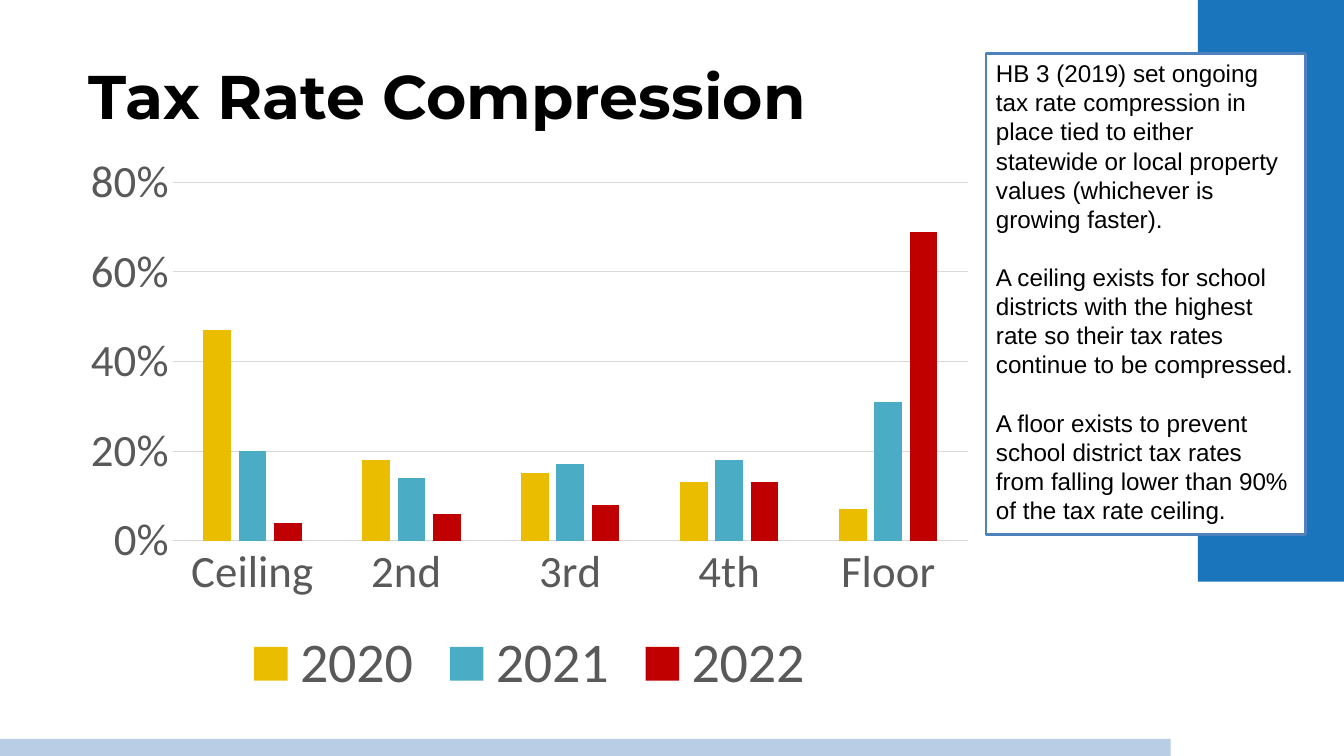
import pptx
import pptx.chart.data
import pptx.dml.color
import pptx.enum.chart
import pptx.enum.shapes
import pptx.enum.text
import pptx.util

Inches = pptx.util.Inches
Pt = pptx.util.Pt

COLORS = {
    "white": "FFFFFF", "black": "000000", "blue": "1B75BC", "pale": "B9CDE5",
    "outline": "4F81BD", "gray": "595959", "rule": "D9D9D9",
    "gold": "EABD00", "teal": "4BACC6", "red": "C00000",
}


def color(name):
    return pptx.dml.color.RGBColor.from_string(COLORS[name])


class SlideBuilder:
    def __init__(self, deck):
        self.page = deck.slides.add_slide(deck.slide_layouts[5])

    def style_font(self, font, face, size, shade, bold=False):
        font.name = face
        font.size = Pt(size)
        font.bold = bold
        font.color.rgb = color(shade)

    def title(self, text, left, top, width, height):
        box = self.page.shapes.title
        box.left, box.top = Inches(left), Inches(top)
        box.width, box.height = Inches(width), Inches(height)
        frame = box.text_frame
        frame.text = text
        frame.vertical_anchor = pptx.enum.text.MSO_ANCHOR.MIDDLE
        para = frame.paragraphs[0]
        para.alignment = pptx.enum.text.PP_ALIGN.LEFT
        self.style_font(para.runs[0].font, "Montserrat", 44, "black", True)

    def rectangle(self, left, top, width, height, fill, line=None):
        box = self.page.shapes.add_shape(
            pptx.enum.shapes.MSO_SHAPE.RECTANGLE,
            Inches(left), Inches(top), Inches(width), Inches(height))
        box.shadow.inherit = False
        box.fill.solid()
        box.fill.fore_color.rgb = color(fill)
        if line:
            box.line.color.rgb = color(line)
            box.line.width = Pt(2)
        else:
            box.line.fill.background()
        return box

    def note(self, texts, left, top, width, height):
        box = self.rectangle(left, top, width, height, "white", "outline")
        frame = box.text_frame
        frame.word_wrap = True
        frame.vertical_anchor = pptx.enum.text.MSO_ANCHOR.TOP
        frame.text = "\n".join(texts)
        for index, para in enumerate(frame.paragraphs):
            para.alignment = pptx.enum.text.PP_ALIGN.LEFT
            para.line_spacing = Pt(20.8)
            para.space_before = Pt(20.8 if index else 0)
            self.style_font(para.runs[0].font, "Arial", 17.3, "black")

    def column_chart(self, categories, series, left, top, width, height):
        data = pptx.chart.data.CategoryChartData(number_format="0%")
        data.categories = categories
        for name, shade, values in series:
            data.add_series(name, values)
        chart = self.page.shapes.add_chart(
            pptx.enum.chart.XL_CHART_TYPE.COLUMN_CLUSTERED,
            Inches(left), Inches(top), Inches(width), Inches(height), data).chart
        chart.has_title = False
        self.style_font(chart.font, "Calibri", 10, "black")

        plot = chart.plots[0]
        plot.gap_width = 219
        plot.overlap = -27
        plot.vary_by_categories = False
        for columns, (name, shade, values) in zip(plot.series, series):
            columns.format.fill.solid()
            columns.format.fill.fore_color.rgb = color(shade)

        for axis in (chart.category_axis, chart.value_axis):
            axis.major_tick_mark = pptx.enum.chart.XL_TICK_MARK.NONE
            axis.minor_tick_mark = pptx.enum.chart.XL_TICK_MARK.NONE
            self.style_font(axis.tick_labels.font, "Calibri", 32, "gray")
        chart.value_axis.format.line.fill.background()
        chart.value_axis.has_major_gridlines = True
        chart.value_axis.minimum_scale = 0
        chart.value_axis.maximum_scale = 0.8
        chart.value_axis.major_unit = 0.2
        chart.value_axis.tick_labels.number_format = "0%"
        chart.value_axis.tick_labels.number_format_is_linked = False
        for ruled in (chart.category_axis, chart.value_axis.major_gridlines):
            ruled.format.line.color.rgb = color("rule")
            ruled.format.line.width = Pt(0.75)

        chart.has_legend = True
        chart.legend.position = pptx.enum.chart.XL_LEGEND_POSITION.BOTTOM
        chart.legend.include_in_layout = False
        self.style_font(chart.legend.font, "Calibri", 40, "gray")


def main():
    deck = pptx.Presentation()
    deck.slide_width, deck.slide_height = Inches(13.33), Inches(7.5)
    slide = SlideBuilder(deck)
    slide.rectangle(11.88, 0, 1.45, 5.77, "blue")
    slide.rectangle(0, 7.33, 11.61, 0.17, "pale")
    slide.column_chart(
        ["Ceiling", "2nd ", "3rd", "4th", "Floor"],
        [
            ("2020", "gold", (0.47, 0.18, 0.15, 0.13, 0.07)),
            ("2021", "teal", (0.2, 0.14, 0.17, 0.18, 0.31)),
            ("2022", "red", (0.04, 0.06, 0.08, 0.13, 0.69)),
        ],
        0.72, 1.42, 9.06, 5.61)
    slide.title("Tax Rate Compression", 0.78, 0.52, 12, 0.84)
    slide.note(
        [
            "HB 3 (2019) set ongoing tax rate compression in place tied to either "
            "statewide or local property values (whichever is growing faster).",
            "A ceiling exists for school districts with the highest rate so their "
            "tax rates continue to be compressed.",
            "A floor exists to prevent school district tax rates from falling lower "
            "than 90% of the tax rate ceiling.",
        ],
        9.78, 0.53, 3.17, 4.77)
    deck.save("out.pptx")


if __name__ == "__main__":
    main()
